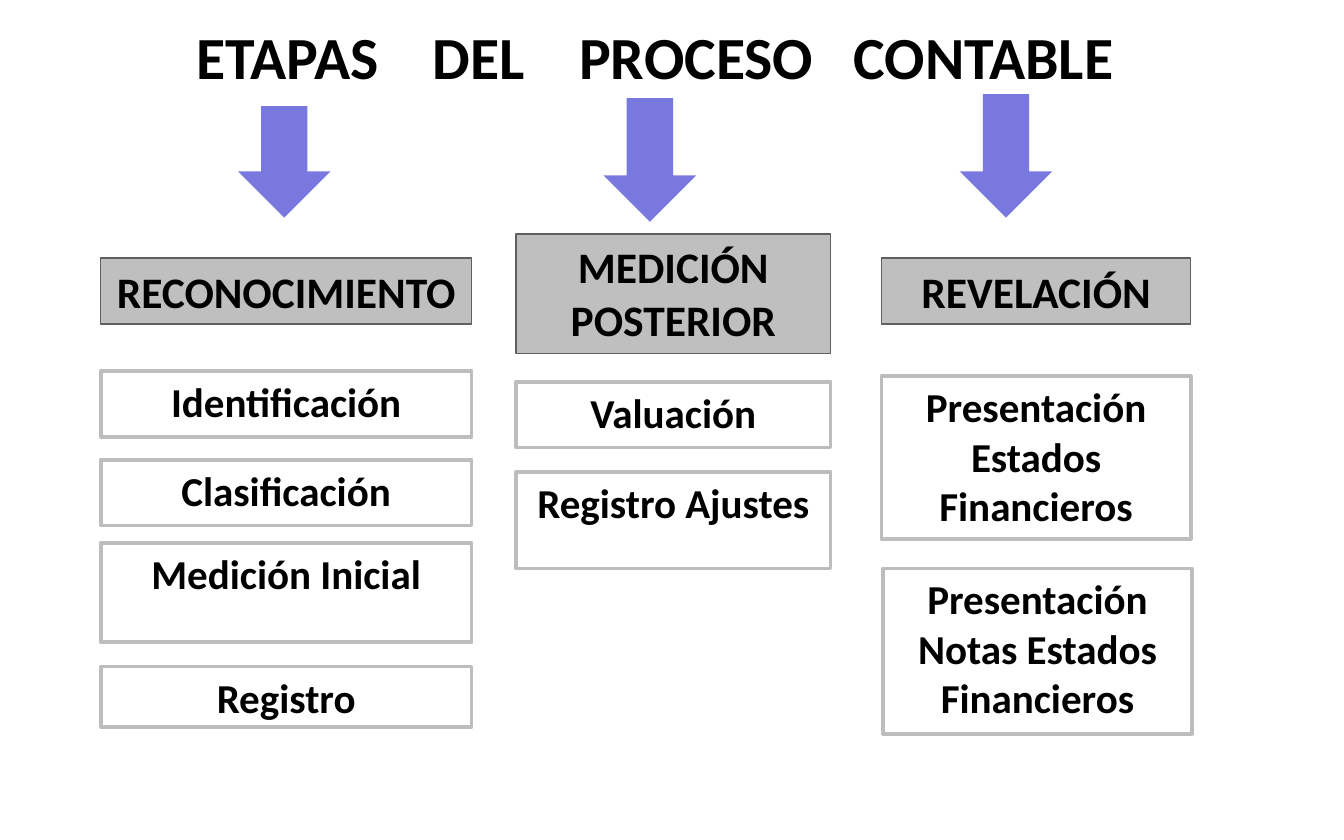
from dataclasses import dataclass

from lxml.etree import SubElement
from pptx import Presentation
from pptx.dml.color import RGBColor
from pptx.enum.shapes import MSO_SHAPE
from pptx.enum.text import MSO_ANCHOR, MSO_AUTO_SIZE, PP_ALIGN
from pptx.oxml.ns import qn
from pptx.util import Inches, Pt


@dataclass(frozen=True)
class Theme:
    font: str = "Calibri"
    text: str = "000000"
    arrow: str = "7878DE"
    stage_fill: str = "BFBFBF"
    stage_line: str = "606060"
    step_fill: str = "FFFFFF"
    step_line: str = "BDBDBD"
    title_size: float = 32
    stage_size: float = 23.3
    step_size: float = 22


class SlideBuilder:
    def __init__(self, slide, theme):
        self.slide = slide
        self.theme = theme

    def set_text(self, shape, text, size, inset_x, inset_y, align=PP_ALIGN.CENTER):
        frame = shape.text_frame
        frame.word_wrap = True
        frame.vertical_anchor = MSO_ANCHOR.TOP
        frame.margin_left = frame.margin_right = Inches(inset_x)
        frame.margin_top = frame.margin_bottom = Inches(inset_y)
        frame.text = text
        paragraph = frame.paragraphs[0]
        paragraph.alignment = align
        for run in paragraph.runs:
            run.font.name = self.theme.font
            run.font.size = Pt(size)
            run.font.bold = True
            run.font.color.rgb = RGBColor.from_string(self.theme.text)
        return frame

    def title(self, words, tab_stops, left, top, width, height, indent):
        shape = self.slide.shapes.add_textbox(
            Inches(left), Inches(top), Inches(width), Inches(height))
        frame = self.set_text(shape, "\t".join(words), self.theme.title_size,
                              0.08, 0.04, PP_ALIGN.LEFT)
        frame.margin_left = Inches(indent)
        properties = frame.paragraphs[0]._p.get_or_add_pPr()
        tab_list = SubElement(properties, qn("a:tabLst"))
        for stop in tab_stops:
            SubElement(tab_list, qn("a:tab"), pos=str(Inches(stop)), algn="l")

    def preset(self, kind, left, top, width, height, fill, line=None, line_width=0):
        shape = self.slide.shapes.add_shape(
            kind, Inches(left), Inches(top), Inches(width), Inches(height))
        shape.shadow.inherit = False
        shape.fill.solid()
        shape.fill.fore_color.rgb = RGBColor.from_string(fill)
        if line:
            shape.line.color.rgb = RGBColor.from_string(line)
            shape.line.width = Pt(line_width)
        else:
            shape.line.fill.background()
        return shape

    def stage(self, text, left, top, width, height):
        theme = self.theme
        shape = self.preset(MSO_SHAPE.RECTANGLE, left, top, width, height,
                            theme.stage_fill, theme.stage_line, 0.75)
        frame = self.set_text(shape, text, theme.stage_size, 0.1, 0.05)
        frame.auto_size = MSO_AUTO_SIZE.SHAPE_TO_FIT_TEXT

    def step(self, text, left, top, width, height):
        theme = self.theme
        shape = self.preset(MSO_SHAPE.RECTANGLE, left, top, width, height,
                            theme.step_fill, theme.step_line, 2)
        self.set_text(shape, text, theme.step_size, 0.08, 0.04)

    def arrow(self, left, top, height):
        self.preset(MSO_SHAPE.DOWN_ARROW, left, top, 0.69, height, self.theme.arrow)


# Each column: left, width, arrow (left, top, height),
# stage (text, top, height), steps (text, left offset, top, height)
COLUMNS = [
    (0.75, 2.76, (1.77, 0.79, 0.83), ("RECONOCIMIENTO", 1.92, 0.49), [
        ("Identificación", 0, 2.76, 0.49),
        ("Clasificación", 0, 3.42, 0.49),
        ("Medición Inicial", 0, 4.04, 0.74),
        ("Registro", 0, 4.96, 0.45),
    ]),
    (3.84, 2.34, (4.49, 0.73, 0.92), ("MEDICIÓN POSTERIOR", 1.74, 0.89), [
        ("Valuación", 0, 2.84, 0.49),
        ("Registro Ajustes", 0, 3.51, 0.72),
    ]),
    (6.56, 2.3, (7.14, 0.7, 0.92), ("REVELACIÓN", 1.92, 0.49), [
        ("Presentación Estados Financieros", 0, 2.8, 1.21),
        ("Presentación Notas Estados Financieros", 0.01, 4.23, 1.23),
    ]),
]


def main():
    presentation = Presentation()
    presentation.slide_width = Inches(10)
    presentation.slide_height = Inches(6.25)
    slide = presentation.slides.add_slide(presentation.slide_layouts[6])
    builder = SlideBuilder(slide, Theme())

    # Title, its words spaced by tab stops
    builder.title(["ETAPAS", "DEL", "PROCESO", "CONTABLE"], [1.76, 2.85, 4.89],
                  0.91, 0.11, 7.97, 1.02, indent=0.55)

    # Columns: arrow, stage heading and steps
    for left, width, arrow, (name, top, height), steps in COLUMNS:
        builder.arrow(*arrow)
        builder.stage(name, left, top, width, height)
        for text, offset, step_top, step_height in steps:
            builder.step(text, left + offset, step_top, width, step_height)

    presentation.save("out.pptx")


if __name__ == "__main__":
    main()
